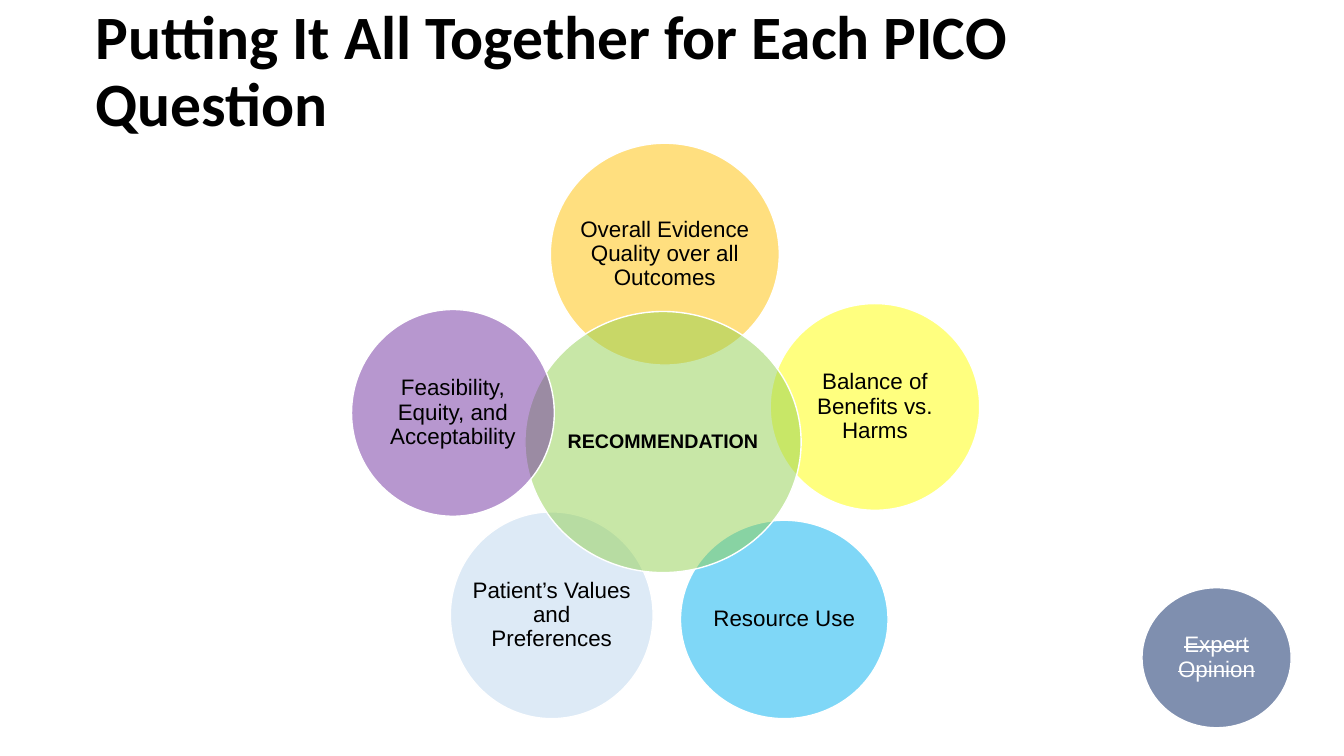
import math
from dataclasses import dataclass

import lxml.etree
import pptx
import pptx.dml.color
import pptx.enum.shapes
import pptx.enum.text
import pptx.oxml.ns
import pptx.presentation
import pptx.slide
import pptx.text.text
import pptx.util
from pptx.util import Cm


@dataclass(frozen=True)
class Theme:
    title_font: str = "Calibri"
    body_font: str = "Arial"
    title_size: int = 44
    factor_size: int = 16
    center_size: int = 14
    dark: str = "000000"
    light: str = "FFFFFF"
    opacity: int = 50
    line_spacing: float = 0.9
    circle_inset: float = 0.53


THEME = Theme()


@dataclass(frozen=True)
class Circle:
    """A labelled circle; lengths in centimetres."""
    label: str
    left: float
    top: float
    width: float
    height: float
    fill: str
    size: int = THEME.factor_size
    color: str = THEME.dark
    bold: bool = False
    strike: bool = False


# Back to front: later circles overlap earlier ones
CIRCLES = [
    Circle("Overall Evidence Quality over all Outcomes", 13.87, 3.61, 5.77, 5.59, "FFC000"),
    Circle("Balance of Benefits vs. Harms", 19.41, 7.65, 5.28, 5.21, "FFFF00"),
    Circle("Resource Use", 17.15, 13.11, 5.23, 5.0, "00B0F0"),
    Circle("Patient’s Values and Preferences", 11.35, 12.9, 5.11, 5.21, "BDD7EE"),
    Circle("RECOMMENDATION", 13.23, 7.85, 6.96, 6.58, "92D050",
           size=THEME.center_size, bold=True),
    Circle("Feasibility, Equity, and Acceptability", 8.86, 7.8, 5.11, 5.21, "7030A0"),
    Circle("Expert Opinion", 28.78, 14.81, 3.76, 3.53, "002060",
           color=THEME.light, strike=True),
]


def rgb(color: str) -> pptx.dml.color.RGBColor:
    return pptx.dml.color.RGBColor.from_string(color)


def write_text(frame: pptx.text.text.TextFrame, text: str, *, font: str, size: int,
               color: str = THEME.dark, bold: bool = False, strike: bool = False,
               align: pptx.enum.text.PP_ALIGN = pptx.enum.text.PP_ALIGN.LEFT) -> None:
    frame.word_wrap = True
    frame.vertical_anchor = pptx.enum.text.MSO_ANCHOR.MIDDLE
    paragraph = frame.paragraphs[0]
    paragraph.alignment = align
    paragraph.line_spacing = THEME.line_spacing
    run = paragraph.add_run()
    run.text = text
    run.font.name = font
    run.font.size = pptx.util.Pt(size)
    run.font.bold = bold
    run.font.color.rgb = rgb(color)
    if strike:
        run.font._element.set("strike", "sngStrike")


def draw_title(slide: pptx.slide.Slide, text: str) -> None:
    heading = slide.shapes.add_textbox(Cm(2.16), Cm(0), Cm(29.21), Cm(3.68))
    write_text(heading.text_frame, text, font=THEME.title_font,
               size=THEME.title_size, bold=True)


def draw_circle(slide: pptx.slide.Slide, circle: Circle) -> None:
    oval = slide.shapes.add_shape(
        pptx.enum.shapes.MSO_SHAPE.OVAL, Cm(circle.left), Cm(circle.top),
        Cm(circle.width), Cm(circle.height))
    oval.shadow.inherit = False
    oval.line.color.rgb = rgb(THEME.light)
    oval.line.width = pptx.util.Pt(1)

    # Translucent fill
    oval.fill.solid()
    oval.fill.fore_color.rgb = rgb(circle.fill)
    tint = oval._element.spPr.find(".//" + pptx.oxml.ns.qn("a:srgbClr"))
    lxml.etree.SubElement(tint, pptx.oxml.ns.qn("a:alpha"), val=str(THEME.opacity * 1000))

    # Measure the inset from the bounding box, not from the oval's inscribed rectangle
    frame = oval.text_frame
    inscribed = (1 - math.sqrt(0.5)) / 2
    frame.margin_left = frame.margin_right = Cm(THEME.circle_inset - inscribed * circle.width)
    frame.margin_top = frame.margin_bottom = Cm(THEME.circle_inset - inscribed * circle.height)
    write_text(frame, circle.label, font=THEME.body_font, size=circle.size,
               color=circle.color, bold=circle.bold, strike=circle.strike,
               align=pptx.enum.text.PP_ALIGN.CENTER)


def main() -> None:
    deck = pptx.Presentation()
    deck.slide_width, deck.slide_height = Cm(33.87), Cm(19.05)
    slide = deck.slides.add_slide(deck.slide_layouts[6])
    draw_title(slide, "Putting It All Together for Each PICO Question")
    for circle in CIRCLES:
        draw_circle(slide, circle)
    deck.save("out.pptx")


if __name__ == "__main__":
    main()
